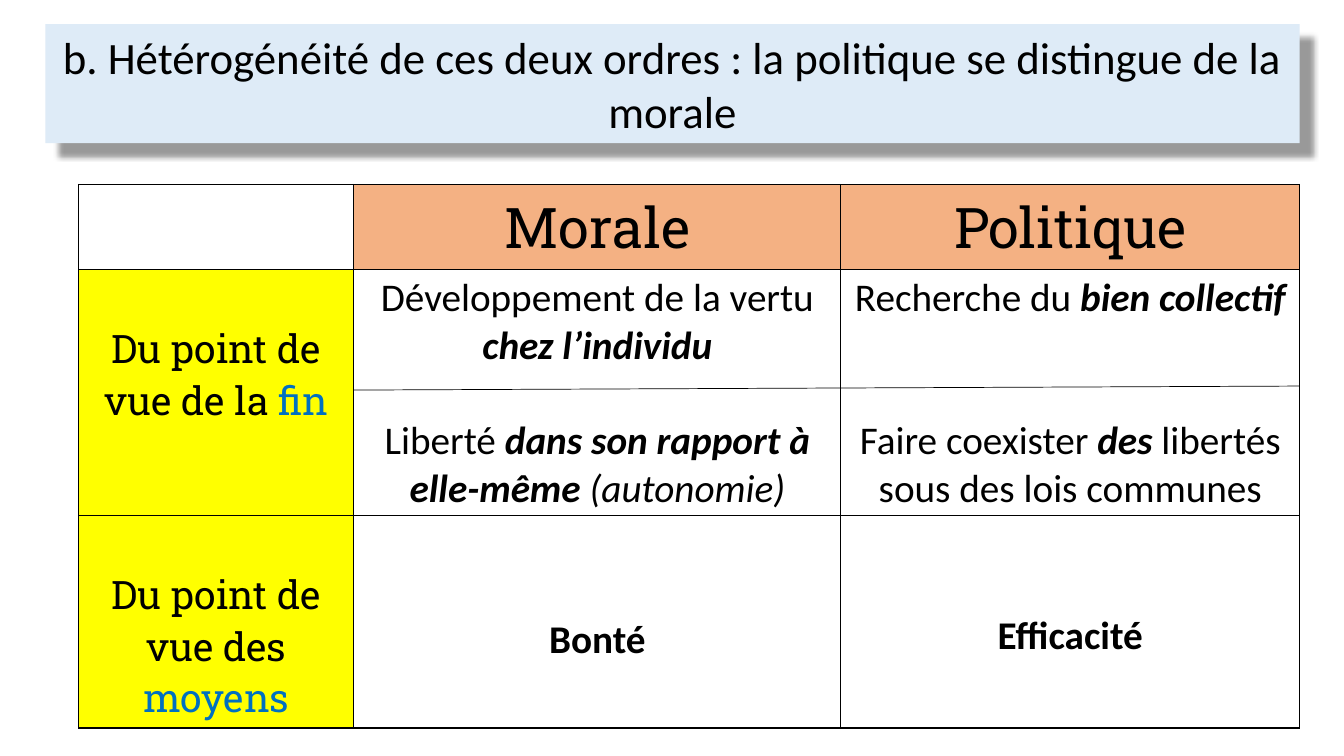
from lxml.etree import SubElement
from pptx import Presentation
from pptx.dml.color import RGBColor
from pptx.enum.shapes import MSO_CONNECTOR, MSO_SHAPE
from pptx.enum.text import MSO_ANCHOR, PP_ALIGN
from pptx.oxml import parse_xml
from pptx.oxml.ns import qn
from pptx.util import Inches, Pt

BLACK = RGBColor(0x00, 0x00, 0x00)
PALE_BLUE = RGBColor(0xDE, 0xEB, 0xF7)
ORANGE = RGBColor(0xF4, 0xB1, 0x83)
YELLOW = RGBColor(0xFF, 0xFF, 0x00)
BLUE = RGBColor(0x00, 0x70, 0xC0)
BODY_FONT, LABEL_FONT = "Calibri", "Roboto Slab"
DRAWING = "http://schemas.openxmlformats.org/drawingml/2006/main"

BANNER_BOX = (0.45, 0.24, 12.44, 1.18)
TABLE_BOX = (0.78, 1.83, 12.11, 5.39)
COLUMNS = (2.73, 4.83, 4.55)
ROWS = (0.84, 2.44, 2.11)
DIVIDER_Y = (2.04, 2.0)

PLAIN, BOLD, ITALIC, BOLD_ITALIC = (False, False), (True, False), (False, True), (True, True)


def write_paragraph(para, spans, font, size, gap=0):
    para.alignment = PP_ALIGN.CENTER
    para.space_before = Pt(gap)
    para.font.name, para.font.size = font, Pt(size)
    para.font.color.rgb = BLACK
    for text, (bold, italic), color in spans:
        span = para.add_run()
        span.text = text
        span.font.bold, span.font.italic = bold, italic
        if color:
            span.font.color.rgb = color


def fill_cell(cell, paragraphs, font, size, top, color):
    if color:
        cell.fill.solid()
        cell.fill.fore_color.rgb = color
    else:
        cell.fill.background()
    cell.margin_top, cell.margin_bottom = Inches(top), Inches(0.02)
    frame = cell.text_frame
    for index, (gap, spans) in enumerate(paragraphs):
        para = frame.add_paragraph() if index else frame.paragraphs[0]
        write_paragraph(para, spans, font, size, gap)


def outline_cell(cell):
    properties = cell._tc.get_or_add_tcPr()
    for position, side in enumerate(("lnL", "lnR", "lnT", "lnB")):
        properties.insert(position, parse_xml(
            f'<a:{side} xmlns:a="{DRAWING}" w="12700"><a:solidFill>'
            f'<a:srgbClr val="{BLACK}"/></a:solidFill></a:{side}>'))


def add_banner(page, box, text):
    banner = page.shapes.add_shape(MSO_SHAPE.RECTANGLE, *map(Inches, box))
    banner.fill.solid()
    banner.fill.fore_color.rgb = PALE_BLUE
    banner.line.fill.background()
    banner._element.spPr.append(parse_xml(
        f'<a:effectLst xmlns:a="{DRAWING}"><a:outerShdw blurRad="50800" dist="165100" '
        f'dir="2700000" algn="tl" rotWithShape="0"><a:srgbClr val="{BLACK}">'
        '<a:alpha val="40000"/></a:srgbClr></a:outerShdw></a:effectLst>'))
    frame = banner.text_frame
    frame.word_wrap = True
    frame.vertical_anchor = MSO_ANCHOR.MIDDLE
    write_paragraph(frame.paragraphs[0], [(text, PLAIN, None)], BODY_FONT, 32)


def add_comparison(page, box):
    table = page.shapes.add_table(len(ROWS), len(COLUMNS), *map(Inches, box)).table
    table.first_row = table.horz_banding = False
    for column, width in zip(table.columns, COLUMNS):
        column.width = Inches(width)
    for row, height in zip(table.rows, ROWS):
        row.height = Inches(height)

    for column, title in enumerate(("Morale", "Politique"), 1):
        fill_cell(table.cell(0, column), [(0, [(title, PLAIN, None)])], LABEL_FONT, 40, 0.05, ORANGE)
    table.cell(0, 0).fill.background()

    for row, (lead, key) in enumerate((("Du point de vue de la ", "fin"),
                                       ("Du point de vue des ", "moyens")), 1):
        fill_cell(table.cell(row, 0), [(0, [(lead, PLAIN, None), (key, PLAIN, BLUE)])],
                  LABEL_FONT, 28, 0.53, YELLOW)

    bodies = {
        (1, 1): (0.05, [
            (0, [("Développement de la vertu ", PLAIN, None), ("chez l’individu", BOLD_ITALIC, None)]),
            (34, [("Liberté ", PLAIN, None), ("dans son rapport à elle-même ", BOLD_ITALIC, None),
                  ("(autonomie)", ITALIC, None)])]),
        (1, 2): (0.05, [
            (0, [("Recherche du ", PLAIN, None), ("bien collectif", BOLD_ITALIC, None)]),
            (68, [("Faire coexister ", PLAIN, None), ("des", BOLD_ITALIC, None),
                  (" libertés sous des lois communes", PLAIN, None)])]),
        (2, 1): (1.0, [(0, [("Bonté", BOLD, None)])]),
        (2, 2): (0.96, [(0, [("Efficacité", BOLD, None)])]),
    }
    for (row, column), (top, paragraphs) in bodies.items():
        fill_cell(table.cell(row, column), paragraphs, BODY_FONT, 28, top, None)
    for cell in table.iter_cells():
        outline_cell(cell)


def add_divider(page, box):
    left, top, width, _ = box
    start, end = (top + offset for offset in DIVIDER_Y)
    divider = page.shapes.add_connector(
        MSO_CONNECTOR.STRAIGHT, Inches(left + COLUMNS[0]), Inches(start),
        Inches(left + width), Inches(end))
    divider.line.color.rgb = BLACK
    divider.line.width = Pt(0.5)
    SubElement(divider._element.spPr, qn("a:effectLst"))


def main():
    deck = Presentation()
    deck.slide_width, deck.slide_height = Inches(13.33), Inches(7.5)
    page = deck.slides.add_slide(deck.slide_layouts[6])
    add_banner(page, BANNER_BOX,
               "b. Hétérogénéité de ces deux ordres : la politique se distingue de la morale")
    add_comparison(page, TABLE_BOX)
    add_divider(page, TABLE_BOX)
    deck.save("out.pptx")


if __name__ == "__main__":
    main()
